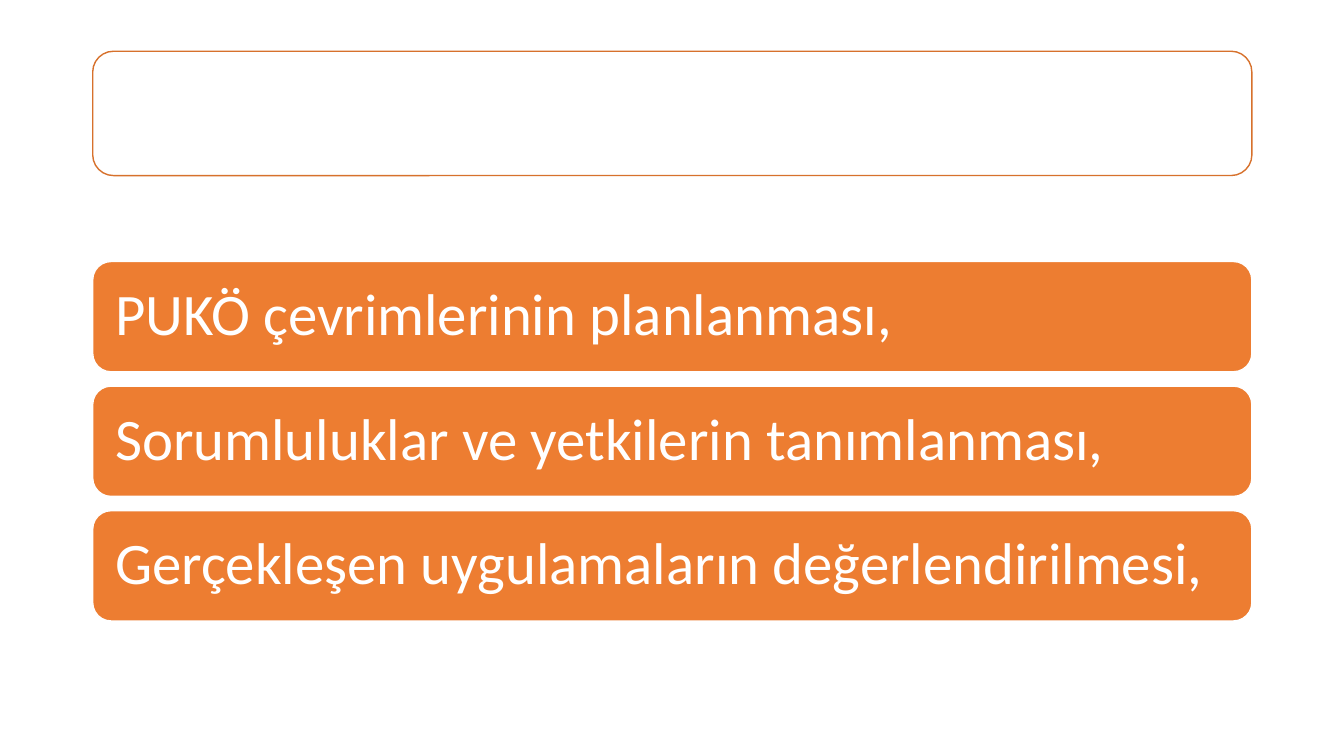
from pptx import Presentation
from pptx.dml.color import RGBColor
from pptx.enum.shapes import MSO_SHAPE
from pptx.enum.text import MSO_ANCHOR, PP_ALIGN
from pptx.util import Pt

STEPS = [
    "PUKÖ çevrimlerinin planlanması,",
    "Sorumluluklar ve yetkilerin tanımlanması,",
    "Gerçekleşen uygulamaların değerlendirilmesi,",
]
COLOURS = {"white": "FFFFFF", "orange": "ED7D31", "outline": "D7712C"}
LEFT, WIDTH = 66.24, 828
TITLE_TOP, TITLE_HEIGHT = 36.6, 88.8
STEP_TOP, STEP_HEIGHT, STEP_PITCH = 186.8, 78.8, 89
INSET = 12.24

FRAME_FORMAT = {
    "margin_left": Pt(INSET),
    "margin_right": Pt(INSET),
    "margin_top": Pt(INSET),
    "margin_bottom": Pt(INSET),
    "vertical_anchor": MSO_ANCHOR.MIDDLE,
    "word_wrap": True,
}
PARAGRAPH_FORMAT = {"alignment": PP_ALIGN.LEFT, "line_spacing": 0.9}
FONT_FORMAT = {"name": "Calibri", "size": Pt(42)}


def apply(target, values):
    for name, value in values.items():
        setattr(target, name, value)


def colour(name):
    return RGBColor.from_string(COLOURS[name])


def add_panel(page, top, height, fill, line):
    box = page.shapes.add_shape(
        MSO_SHAPE.ROUNDED_RECTANGLE, Pt(LEFT), Pt(top), Pt(WIDTH), Pt(height)
    )
    box.shadow.inherit = False
    box.fill.solid()
    box.fill.fore_color.rgb = colour(fill)
    box.line.color.rgb = colour(line)
    box.line.width = Pt(1)
    return box


def write_step(box, text):
    apply(box.text_frame, FRAME_FORMAT)
    para = box.text_frame.paragraphs[0]
    apply(para, PARAGRAPH_FORMAT)
    span = para.add_run()
    span.text = text
    apply(span.font, FONT_FORMAT)
    span.font.color.rgb = colour("white")


def main():
    deck = Presentation()
    apply(deck, {"slide_width": Pt(960), "slide_height": Pt(540)})
    page = deck.slides.add_slide(deck.slide_layouts[6])
    add_panel(page, TITLE_TOP, TITLE_HEIGHT, "white", "outline")
    for index, text in enumerate(STEPS):
        top = STEP_TOP + index * STEP_PITCH
        write_step(add_panel(page, top, STEP_HEIGHT, "orange", "white"), text)
    deck.save("out.pptx")


if __name__ == "__main__":
    main()
